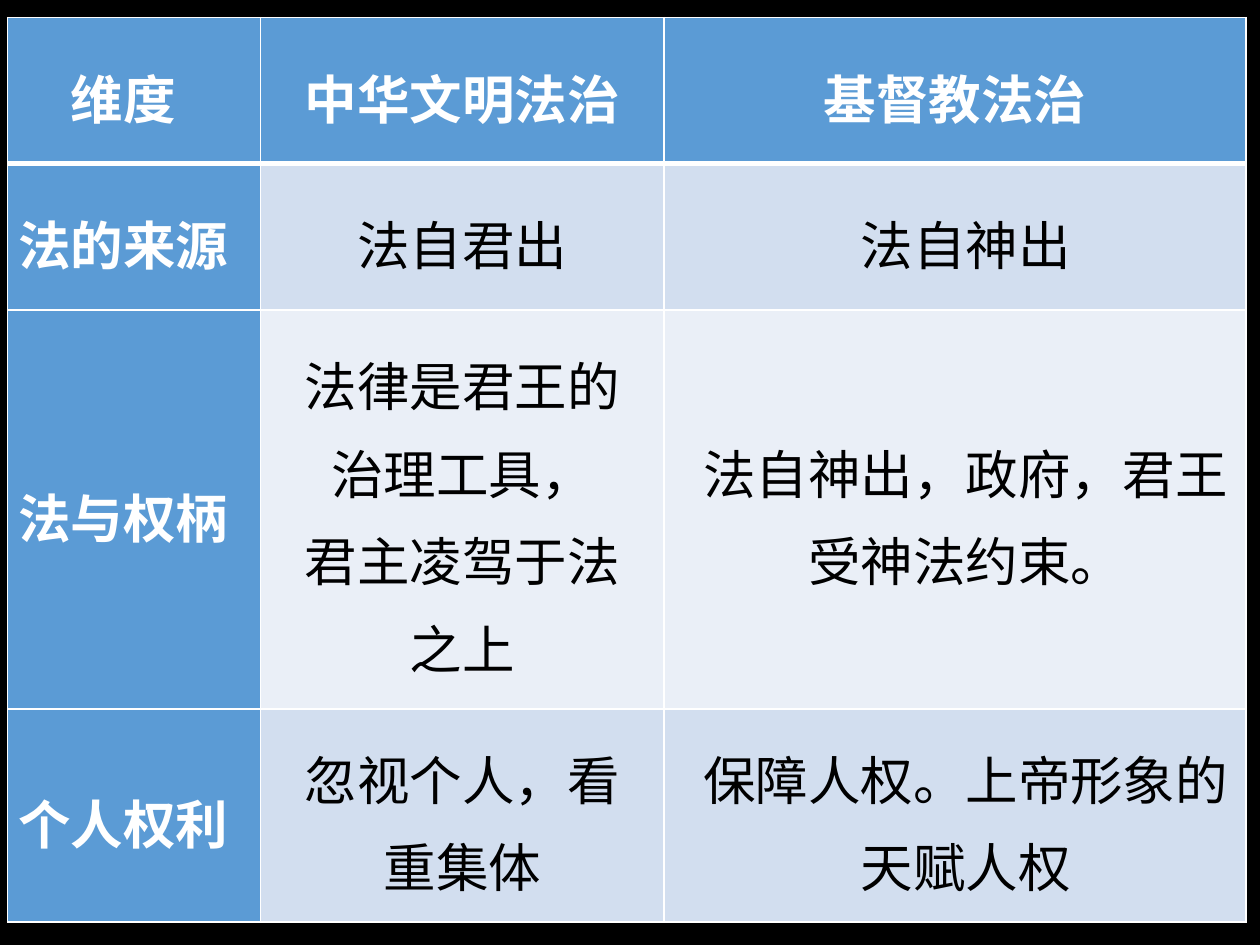
"""Build a slide with a table comparing two traditions of rule of law."""
import pptx
import pptx.util
import pptx.dml.color
import pptx.enum.text
import pptx.oxml
import pptx.oxml.ns
from dataclasses import dataclass

Pt = pptx.util.Pt
RGBColor = pptx.dml.color.RGBColor

ROWS = [
    ("维度", "中华文明法治", "基督教法治"),
    ("法的来源", "法自君出", "法自神出"),
    ("法与权柄", "法律是君王的治理工具，\n君主凌驾于法之上", "法自神出，政府，君王受神法约束。"),
    ("个人权利", "忽视个人，看重集体", "保障人权。上帝形象的天赋人权"),
]
COLUMN_WIDTHS = (144.7, 230.4, 332.6)
ROW_HEIGHTS = (83.5, 83.5, 228.2, 121.7)
TABLE_LEFT, TABLE_TOP = 4.3, 10.1
SIDE_MARGIN, END_MARGIN = 12.2, 7.2


@dataclass(frozen=True)
class Theme:
    font: str = "Noto Sans CJK SC"
    size: float = 30
    line_spacing: float = 1.15
    background: str = "000000"
    heading_fill: str = "5B9BD5"
    heading_text: str = "FFFFFF"
    body_text: str = "000000"
    bands: tuple = ("EAEFF7", "D2DEEF")
    border: str = "FFFFFF"
    thin: float = 1
    thick: float = 3


THEME = Theme()


def apply_format(target, values):
    for name, value in values.items():
        setattr(target, name, value)


def add_borders(cell, row_index):
    properties = cell._tc.get_or_add_tcPr()
    widths = {
        "lnL": THEME.thin,
        "lnR": THEME.thin,
        "lnT": THEME.thick if row_index == 1 else THEME.thin,
        "lnB": THEME.thick if row_index == 0 else THEME.thin,
    }
    for position, (tag, width) in enumerate(widths.items()):
        properties.insert(position, pptx.oxml.parse_xml(
            f'<a:{tag} {pptx.oxml.ns.nsdecls("a")} w="{Pt(width)}"><a:solidFill>'
            f'<a:srgbClr val="{THEME.border}"/></a:solidFill></a:{tag}>'))


def add_text(cell, text, heading):
    cell.text_frame.text = text
    color = THEME.heading_text if heading else THEME.body_text
    for paragraph in cell.text_frame.paragraphs:
        apply_format(paragraph, {
            "alignment": pptx.enum.text.PP_ALIGN.CENTER,
            "line_spacing": THEME.line_spacing,
        })
        for run in paragraph.runs:
            apply_format(run.font, {"name": THEME.font, "size": Pt(THEME.size), "bold": heading})
            run.font.color.rgb = RGBColor.from_string(color)
            run.font._element.append(pptx.oxml.parse_xml(
                f'<a:ea {pptx.oxml.ns.nsdecls("a")} typeface="{THEME.font}"/>'))


def format_cell(cell, text, row_index, column_index):
    heading = row_index == 0 or column_index == 0
    last_body = column_index == len(COLUMN_WIDTHS) - 1 and row_index > 0
    apply_format(cell, {
        "vertical_anchor": pptx.enum.text.MSO_ANCHOR.MIDDLE,
        "margin_left": Pt(0 if column_index == 0 else SIDE_MARGIN),
        "margin_right": Pt(0 if last_body else SIDE_MARGIN),
        "margin_top": Pt(END_MARGIN),
        "margin_bottom": Pt(END_MARGIN),
    })
    cell.fill.solid()
    fill = THEME.heading_fill if heading else THEME.bands[row_index % 2]
    cell.fill.fore_color.rgb = RGBColor.from_string(fill)
    add_borders(cell, row_index)
    add_text(cell, text, heading)


def add_comparison_table(slide):
    table = slide.shapes.add_table(
        len(ROWS), len(COLUMN_WIDTHS), Pt(TABLE_LEFT), Pt(TABLE_TOP),
        Pt(sum(COLUMN_WIDTHS)), Pt(sum(ROW_HEIGHTS))).table
    for column, width in zip(table.columns, COLUMN_WIDTHS):
        column.width = Pt(width)
    for row, height in zip(table.rows, ROW_HEIGHTS):
        row.height = Pt(height)
    for row_index, texts in enumerate(ROWS):
        for column_index, text in enumerate(texts):
            format_cell(table.cell(row_index, column_index), text, row_index, column_index)


def main():
    presentation = pptx.Presentation()
    apply_format(presentation, {"slide_width": Pt(720), "slide_height": Pt(540)})
    slide = presentation.slides.add_slide(presentation.slide_layouts[6])
    slide.background.fill.solid()
    slide.background.fill.fore_color.rgb = RGBColor.from_string(THEME.background)
    add_comparison_table(slide)
    presentation.save("out.pptx")


if __name__ == "__main__":
    main()
